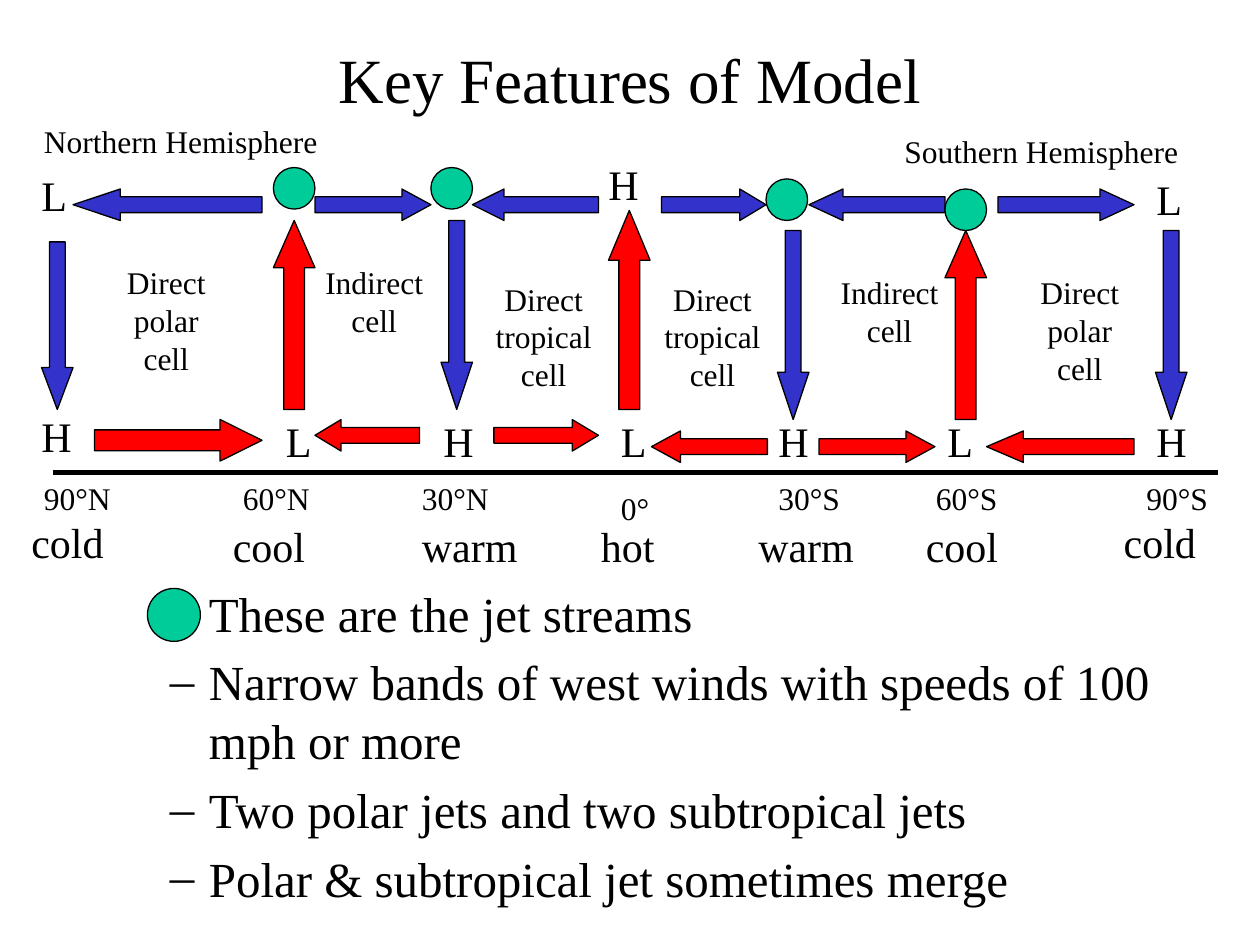
from lxml.etree import SubElement
from pptx import Presentation
from pptx.dml.color import RGBColor
from pptx.enum.shapes import MSO_CONNECTOR, MSO_SHAPE
from pptx.enum.text import MSO_ANCHOR, MSO_AUTO_SIZE, PP_ALIGN
from pptx.oxml.ns import qn
from pptx.util import Inches, Pt

FONT = "Times New Roman"
COLORS = {"ink": "000000", "warm": "FF0000", "cold": "3333CC", "jet": "00CC99"}
ARROWS = {
    "up": MSO_SHAPE.UP_ARROW,
    "down": MSO_SHAPE.DOWN_ARROW,
    "left": MSO_SHAPE.LEFT_ARROW,
    "right": MSO_SHAPE.RIGHT_ARROW,
}
WIDTHS = {"H": 0.44, "L": 0.4, "hot": 0.64, "warm": 0.97, "cool": 0.8, "cold": 0.8}

# Latitude, left, top, width; then its climate, left, top
ZONES = [
    ("90°N", 0.25, 3.75, 0.73, "cold", 0.15, 4.05),
    ("60°N", 1.83, 3.75, 0.91, "cool", 1.75, 4.08),
    ("30°N", 3.25, 3.75, 0.73, "warm", 3.25, 4.08),
    ("0°", 4.83, 3.83, 0.43, "hot", 4.67, 4.08),
    ("30°S", 6.08, 3.75, 0.69, "warm", 5.92, 4.08),
    ("60°S", 7.33, 3.75, 0.69, "cool", 7.25, 4.08),
    ("90°S", 9, 3.75, 0.69, "cold", 8.82, 4.05),
]
PRESSURES = [
    ("H", 0.23, 3.21), ("L", 2.17, 3.25), ("H", 3.42, 3.25), ("L", 4.83, 3.25),
    ("H", 6.08, 3.25), ("L", 7.42, 3.25), ("H", 9.08, 3.25),
    ("L", 0.23, 1.3), ("H", 4.73, 1.21), ("L", 9.08, 1.33),
]
# Direction, colour, left, top, width, height
WINDS = [
    ("up", "warm", 4.83, 1.67, 0.33, 1.58),
    ("up", "warm", 2.17, 1.75, 0.33, 1.5),
    ("up", "warm", 7.5, 1.83, 0.33, 1.5),
    ("down", "cold", 0.33, 1.92, 0.25, 1.33),
    ("down", "cold", 3.5, 1.75, 0.25, 1.5),
    ("down", "cold", 6.17, 1.83, 0.25, 1.5),
    ("down", "cold", 9.17, 1.83, 0.25, 1.5),
    ("left", "cold", 0.58, 1.5, 1.5, 0.25),
    ("right", "cold", 2.5, 1.5, 0.92, 0.25),
    ("left", "cold", 3.75, 1.5, 1, 0.25),
    ("right", "cold", 5.25, 1.5, 0.83, 0.25),
    ("left", "cold", 6.42, 1.5, 1.08, 0.25),
    ("right", "cold", 7.92, 1.5, 1.08, 0.25),
    ("right", "warm", 0.75, 3.33, 1.33, 0.33),
    ("left", "warm", 2.5, 3.33, 0.83, 0.25),
    ("right", "warm", 3.92, 3.33, 0.83, 0.25),
    ("left", "warm", 5.17, 3.42, 0.92, 0.25),
    ("right", "warm", 6.5, 3.42, 0.92, 0.25),
    ("left", "warm", 7.83, 3.42, 1.17, 0.25),
]
CELLS = [
    ("Direct\npolar\ncell", 0.9, 2.04, 0.84),
    ("Indirect\ncell", 2.48, 2.04, 0.98),
    ("Direct\ntropical\ncell", 3.83, 2.17, 0.97),
    ("Direct\ntropical\ncell", 5.17, 2.17, 0.97),
    ("Indirect\ncell", 6.57, 2.12, 0.98),
    ("Direct\npolar\ncell", 8.15, 2.12, 0.84),
]
# Left, top, size
JETS = [
    (2.17, 1.33, 0.33), (3.42, 1.33, 0.33), (6.08, 1.42, 0.33),
    (7.5, 1.5, 0.33), (1.17, 4.67, 0.42),
]
NOTES = [
    "These are the jet streams",
    "Narrow bands of west winds with speeds of 100 mph or more",
    "Two polar jets and two subtropical jets",
    "Polar & subtropical jet sometimes merge",
]


def color(name):
    return RGBColor.from_string(COLORS[name])


def add_text(slide, text, x, y, w, h, size=18, align=PP_ALIGN.LEFT,
             anchor=MSO_ANCHOR.TOP, wrap=False, before=0):
    """Add a text box with one paragraph per line of text."""
    box = slide.shapes.add_textbox(Inches(x), Inches(y), Inches(w), Inches(h))
    frame = box.text_frame
    frame.text = text
    frame.word_wrap = wrap
    frame.vertical_anchor = anchor
    frame.auto_size = MSO_AUTO_SIZE.NONE if wrap else MSO_AUTO_SIZE.SHAPE_TO_FIT_TEXT
    for para in frame.paragraphs:
        para.alignment = align
        para.space_before = Pt(before)
        font = para.runs[0].font
        font.name, font.size = FONT, Pt(size)
        font.color.rgb = color("ink")
    return frame


def add_shape(slide, kind, fill, x, y, w, h):
    shape = slide.shapes.add_shape(kind, Inches(x), Inches(y), Inches(w), Inches(h))
    shape.shadow.inherit = False
    shape.fill.solid()
    shape.fill.fore_color.rgb = color(fill)
    shape.line.color.rgb = color("ink")
    shape.line.width = Pt(0.75)
    return shape


def add_wind(slide, way, fill, x, y, w, h):
    """Add a block arrow whose head takes a quarter of its length."""
    arrow = add_shape(slide, ARROWS[way], fill, x, y, w, h)
    arrow.adjustments[0] = 0.5
    arrow.adjustments[1] = max(w, h) / min(w, h) / 4


def add_ground(slide):
    line = slide.shapes.add_connector(
        MSO_CONNECTOR.STRAIGHT, Inches(0.42), Inches(3.75), Inches(9.67), Inches(3.75))
    line.line.color.rgb = color("ink")
    line.line.width = Pt(3)
    SubElement(line._element.spPr, qn("a:effectLst"))


def add_notes(slide):
    """Add the notes; a jet circle marks the first, dashes the others."""
    frame = add_text(slide, "\n".join(NOTES), 0.75, 4.58, 8.5, 2.67,
                     size=28, wrap=True, before=5.6)
    for i, para in enumerate(frame.paragraphs):
        props = para._p.get_or_add_pPr()
        props.set("marL", str(Inches(0.81)))
        if i:
            props.set("indent", str(Inches(-0.31)))
            SubElement(props, qn("a:buFont"), typeface=FONT)
            SubElement(props, qn("a:buChar"), char="–")


def main():
    deck = Presentation()
    deck.slide_width, deck.slide_height = Inches(10), Inches(7.5)
    slide = deck.slides.add_slide(deck.slide_layouts[6])

    add_text(slide, "Key Features of Model", 0.75, 0, 8.5, 1.25, size=36,
             align=PP_ALIGN.CENTER, anchor=MSO_ANCHOR.MIDDLE, wrap=True)
    add_text(slide, "Northern Hemisphere", 0.25, 0.92, 2.38, 0.4)
    add_text(slide, "Southern Hemisphere", 7.08, 1, 2.38, 0.4)
    add_ground(slide)
    for place, x, y, w, heat, left, top in ZONES:
        add_text(slide, place, x, y, w, 0.4)
        add_text(slide, heat, left, top, WIDTHS[heat], 0.5, size=24)
    for wind in WINDS:
        add_wind(slide, *wind)
    for mark, x, y in PRESSURES:
        add_text(slide, mark, x, y, WIDTHS[mark], 0.5, size=24)
    for text, x, y, w in CELLS:
        high = 0.1 + 0.3 * len(text.split("\n"))
        add_text(slide, text, x, y, w, high, align=PP_ALIGN.CENTER)
    add_notes(slide)
    for x, y, size in JETS:
        add_shape(slide, MSO_SHAPE.OVAL, "jet", x, y, size, size)

    deck.save("out.pptx")


if __name__ == "__main__":
    main()
